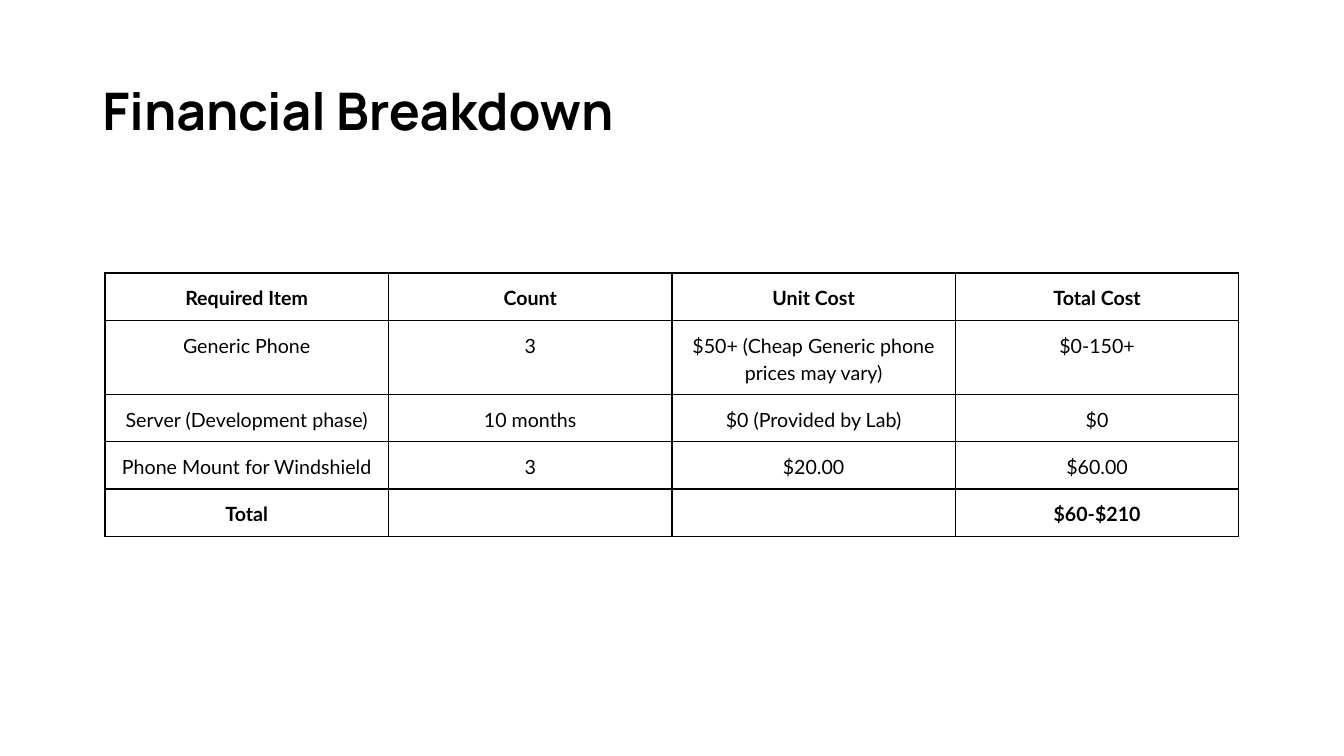
"""Build the financial breakdown slide."""
import dataclasses

import lxml.etree
import pptx
import pptx.dml.color
import pptx.enum.text
import pptx.oxml.ns
import pptx.util

Pt = pptx.util.Pt
Align = pptx.enum.text.PP_ALIGN
Anchor = pptx.enum.text.MSO_ANCHOR
qn = pptx.oxml.ns.qn


@dataclasses.dataclass(frozen=True)
class Theme:
    ink: str = "000000"
    title_font: str = "Manrope"
    body_font: str = "Lato"
    title_size: int = 37
    body_size: int = 14
    border_width: int = 1


def apply_format(target, values):
    for name, value in values.items():
        setattr(target, name, value)


class SlideBuilder:
    def __init__(self, slide, theme):
        self.slide = slide
        self.theme = theme

    def add_text(self, para, text, font_values, para_values):
        apply_format(para, para_values)
        span = para.add_run()
        span.text = text
        apply_format(span.font, font_values)
        span.font.color.rgb = pptx.dml.color.RGBColor.from_string(self.theme.ink)

    def title(self, text, left, top, width, height):
        box = self.slide.shapes.title
        apply_format(box, {"left": Pt(left), "top": Pt(top),
                           "width": Pt(width), "height": Pt(height)})
        apply_format(box.text_frame, {
            "vertical_anchor": Anchor.MIDDLE, "word_wrap": True,
            "auto_size": pptx.enum.text.MSO_AUTO_SIZE.NONE,
            "margin_left": Pt(7.2), "margin_right": Pt(7.2),
            "margin_top": Pt(3.6), "margin_bottom": Pt(3.6)})
        self.add_text(box.text_frame.paragraphs[0], text,
                      {"name": self.theme.title_font, "size": Pt(self.theme.title_size), "bold": True},
                      {"alignment": Align.LEFT, "line_spacing": 0.9})

    def border(self, cell):
        properties = cell._tc.get_or_add_tcPr()
        for side in ("a:lnL", "a:lnR", "a:lnT", "a:lnB"):
            line = lxml.etree.SubElement(properties, qn(side), w=str(Pt(self.theme.border_width)))
            fill = lxml.etree.SubElement(line, qn("a:solidFill"))
            lxml.etree.SubElement(fill, qn("a:srgbClr"), val=self.theme.ink)

    def cell(self, cell, text, bold):
        apply_format(cell, {"margin_left": Pt(5), "margin_right": Pt(5),
                            "margin_top": Pt(7.2), "margin_bottom": Pt(7.2)})
        self.border(cell)
        cell.fill.background()
        para = cell.text_frame.paragraphs[0]
        if text:
            self.add_text(para, text,
                          {"name": self.theme.body_font, "size": Pt(self.theme.body_size), "bold": bold},
                          {"alignment": Align.CENTER, "line_spacing": 1.15, "space_before": Pt(12)})
        else:
            lxml.etree.SubElement(para._p, qn("a:endParaRPr"), sz=str(self.theme.body_size * 100))

    def table(self, rows, left, top, column_width, row_height):
        column_count = len(rows[0])
        table = self.slide.shapes.add_table(
            len(rows), column_count, Pt(left), Pt(top),
            Pt(column_width * column_count), Pt(row_height * len(rows))).table
        apply_format(table, {"first_row": False, "horz_banding": False})
        for row_index, row in enumerate(rows):
            bold = row_index in (0, len(rows) - 1)
            for column_index, text in enumerate(row):
                self.cell(table.cell(row_index, column_index), text, bold)


COSTS = [
    ("Required Item", "Count", "Unit Cost", "Total Cost"),
    ("Generic Phone", "3", "$50+ (Cheap Generic phone prices may vary)", "$0-150+"),
    ("Server (Development phase)", "10 months", "$0 (Provided by Lab)", "$0"),
    ("Phone Mount for Windshield", "3", "$20.00", "$60.00"),
    ("Total", "", "", "$60-$210"),
]


def main():
    deck = pptx.Presentation()
    apply_format(deck, {"slide_width": Pt(960), "slide_height": Pt(540)})
    page = SlideBuilder(deck.slides.add_slide(deck.slide_layouts[5]), Theme())
    page.title("Financial Breakdown", 66, 28.75, 828, 104.4)
    page.table(COSTS, left=75, top=195, column_width=202.5, row_height=30)
    deck.save("out.pptx")


if __name__ == "__main__":
    main()
